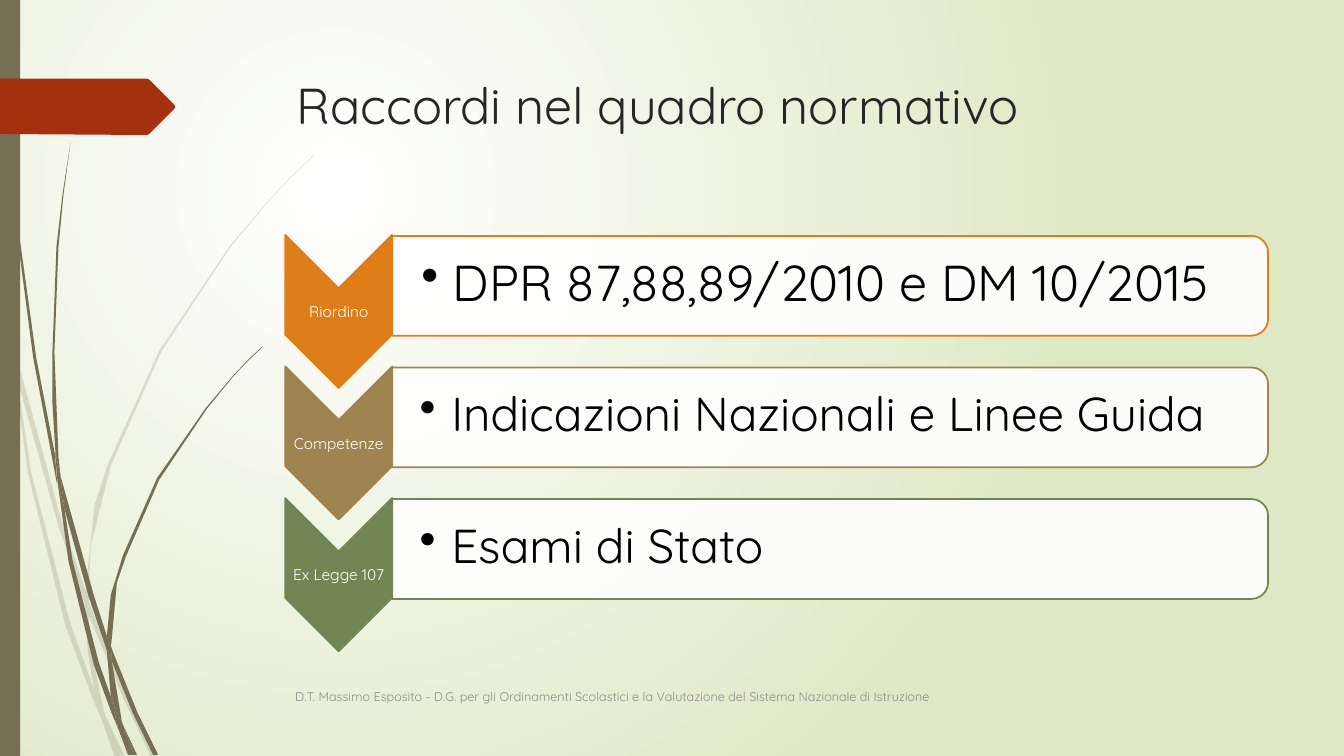
from dataclasses import dataclass

from lxml.etree import SubElement
from pptx import Presentation
from pptx.dml.color import RGBColor
from pptx.enum.shapes import MSO_SHAPE as Preset
from pptx.enum.text import MSO_ANCHOR as Anchor, MSO_AUTO_SIZE as AutoSize, PP_ALIGN as Align
from pptx.oxml.ns import qn
from pptx.util import Pt


@dataclass(frozen=True)
class Theme:
    font: str = "Quicksand"
    olive: str = "766F54"
    tag: str = "A53010"
    white: str = "FFFFFF"
    meadow: str = "DFE8C4"
    heading: str = "262626"
    body: str = "000000"
    muted: str = "8C8C8C"
    orange: str = "DE7E18"
    tan: str = "9F8351"
    green: str = "728653"
    title_size: float = 36
    label_size: float = 11
    footer_size: float = 9
    outline: float = 1.25


# Outlines are in hundredths of an inch, which is 0.72 points
OUTLINE_UNIT = Pt(0.72)

PALE_GRASS = [
    [(11, 350), (9, 322), (0, 282), (0, 299), (10, 344)],
    [(58, 522), (84, 599), (85, 586), (62, 520), (14, 345), (17, 376)],
    [(92, 607), (88, 596), (88, 610), (123, 694), (150, 751), (155, 751), (127, 692)],
    [(119, 751), (124, 751), (105, 711)],
    [(93, 683), (70, 619), (31, 469), (17, 376), (11, 350), (28, 470), (65, 621),
     (92, 693), (101, 714), (99, 707)],
    [(84, 599), (87, 646), (93, 683), (96, 692), (105, 711), (103, 706), (91, 646),
     (88, 610), (88, 608)],
    [(88, 584), (90, 542), (110, 462), (160, 349), (229, 245), (268, 198), (290, 175),
     (312, 154), (312, 153), (289, 175), (268, 197), (228, 244), (158, 348), (107, 461),
     (94, 501), (85, 584), (85, 586), (88, 596)],
    [(101, 714), (114, 751), (119, 751)],
    [(88, 608), (88, 610), (88, 596), (85, 586), (84, 599)],
    [(96, 692), (93, 683), (99, 707), (101, 714), (119, 751), (105, 711)],
]
DARK_GRASS = [
    [(7, 110), (17, 233), (33, 355), (56, 477), (57, 481), (55, 457), (55, 453),
     (36, 355), (19, 232), (8, 109), (5, 48), (4, 0), (3, 0), (4, 48)],
    [(88, 592), (106, 645), (106, 631), (93, 590), (60, 472), (64, 505)],
    [(113, 649), (110, 641), (111, 656), (132, 708), (152, 749), (157, 749), (136, 706)],
    [(110, 691), (98, 657), (72, 556), (64, 505), (57, 477), (68, 557), (93, 659),
     (111, 708), (117, 722), (116, 717)],
    [(60, 472), (58, 453), (54, 349), (58, 245), (63, 193), (70, 141), (62, 193),
     (56, 245), (52, 349), (52, 400), (55, 449)],
    [(133, 749), (136, 749), (122, 719)],
    [(57, 477), (64, 505), (60, 472), (55, 449), (55, 453)],
    [(111, 633), (116, 578), (125, 552), (158, 476), (205, 406), (231, 374), (245, 359),
     (261, 344), (260, 344), (245, 358), (231, 373), (204, 405), (156, 474), (122, 551),
     (110, 590), (106, 631), (110, 641)],
    [(117, 722), (127, 749), (131, 749)],
    [(106, 645), (110, 691), (116, 706), (122, 719), (121, 716), (111, 656), (109, 651)],
    [(106, 645), (109, 651), (111, 656), (110, 641), (106, 631)],
    [(116, 706), (110, 691), (116, 717), (117, 722), (130, 749), (133, 749), (122, 719)],
]
TAG_OUTLINE = [(0, 78), (146, 78), (148, 79), (173, 104), (174, 106), (173, 108),
               (148, 133), (146, 134), (0, 133)]


class SlideBuilder:
    def __init__(self, slide, theme):
        self.slide = slide
        self.theme = theme

    def background(self, inner, outer):
        fill = self.slide.background.fill
        fill.gradient()
        for stop, color in zip(fill.gradient_stops, (inner, outer)):
            stop.color.rgb = RGBColor.from_string(color)
        gradient = self.slide.element.find(".//" + qn("a:gradFill"))
        gradient.remove(gradient.find(qn("a:lin")))
        circle = SubElement(gradient, qn("a:path"), {"path": "circle"})
        SubElement(circle, qn("a:fillToRect"), l="50000", t="50000", r="100000", b="100000")

    def paint(self, shape, fill, opacity=100, line=None):
        shape.shadow.inherit = False
        shape.fill.solid()
        shape.fill.fore_color.rgb = RGBColor.from_string(fill)
        if opacity < 100:
            color = shape.element.spPr.find(qn("a:solidFill"))[0]
            SubElement(color, qn("a:alpha"), val=str(opacity * 1000))
        if line:
            shape.line.color.rgb = RGBColor.from_string(line)
            shape.line.width = Pt(self.theme.outline)
        else:
            shape.line.fill.background()

    def outline(self, points, fill, opacity=100):
        builder = self.slide.shapes.build_freeform(*points[0], scale=OUTLINE_UNIT)
        builder.add_line_segments(points[1:], close=True)
        self.paint(builder.convert_to_shape(), fill, opacity)

    def preset(self, kind, box, fill, opacity=100, line=None, rotation=0):
        shape = self.slide.shapes.add_shape(kind, *map(Pt, box))
        shape.rotation = rotation
        self.paint(shape, fill, opacity, line)

    def set_text(self, frame, text, size, color, align=Align.LEFT):
        frame.word_wrap = True
        frame.auto_size = AutoSize.NONE
        frame.text = text
        paragraph = frame.paragraphs[0]
        paragraph.alignment = align
        font = paragraph.runs[0].font
        font.name = self.theme.font
        font.size = Pt(size)
        font.color.rgb = RGBColor.from_string(color)
        return paragraph

    def title(self, text, box):
        heading = self.slide.shapes.title
        heading.left, heading.top, heading.width, heading.height = map(Pt, box)
        heading.text_frame.vertical_anchor = Anchor.TOP
        self.set_text(heading.text_frame, text, self.theme.title_size, self.theme.heading)

    def text(self, text, box, size, color, align=Align.LEFT, insets=(7.2, 3.6, 7.2, 3.6)):
        frame = self.slide.shapes.add_textbox(*map(Pt, box)).text_frame
        frame.vertical_anchor = Anchor.MIDDLE
        (frame.margin_left, frame.margin_top,
         frame.margin_right, frame.margin_bottom) = map(Pt, insets)
        return self.set_text(frame, text, size, color, align)

    def bullet(self, paragraph, indent):
        paragraph.level = 1
        properties = paragraph._p.get_or_add_pPr()
        properties.set("marL", str(Pt(indent)))
        properties.set("indent", str(-Pt(indent)))
        SubElement(properties, qn("a:buChar"), char="•")

    def step(self, offset, label, content, size, color):
        theme = self.theme
        # Chevron and its label
        self.preset(Preset.CHEVRON, (187.2, 184.3 + offset, 109.4, 76.3), color,
                    line=color, rotation=90)
        name = self.text(label, (203.8, 206.6 + offset, 76.3, 33.1), theme.label_size,
                         theme.white, Align.CENTER, (0.7,) * 4)
        name.line_spacing = 0.9
        # Panel and its bullet
        self.preset(Preset.ROUND_2_SAME_RECTANGLE, (557.3, -108.7 + offset, 71.3, 625.7),
                    theme.white, 90, color, 90)
        edge = size * 0.06
        rule = self.text(content, (280.8, 171.4 + offset, 622.1, 64.1), size, theme.body,
                         insets=(size * 0.56, edge, edge, edge))
        rule.line_spacing = 0.9
        self.bullet(rule, 22.5)


def main():
    theme = Theme()
    deck = Presentation()
    deck.slide_width, deck.slide_height = Pt(960), Pt(540)
    page = SlideBuilder(deck.slides.add_slide(deck.slide_layouts[5]), theme)

    # Backdrop
    page.background(theme.white, theme.meadow)
    for blades, opacity in ((PALE_GRASS, 20), (DARK_GRASS, 100)):
        for blade in blades:
            page.outline(blade, theme.olive, opacity)
    page.preset(Preset.RECTANGLE, (0, 0, 14.4, 540), theme.olive)
    page.outline(TAG_OUTLINE, theme.tag)

    # Title
    page.title("Raccordi nel quadro normativo", (204.5, 49, 702, 54))

    # Steps
    steps = [
        ("Riordino", "DPR 87,88,89/2010 e DM 10/2015", 36, theme.orange),
        ("Competenze", "Indicazioni Nazionali e Linee Guida", 34, theme.tan),
        ("Ex Legge 107", "Esami di Stato", 34, theme.green),
    ]
    row_pitch = 94
    for row, step in enumerate(steps):
        page.step(row * row_pitch, *step)

    # Footer
    page.text("D.T. Massimo Esposito - D.G. per gli Ordinamenti Scolastici e la "
              "Valutazione del Sistema Nazionale di Istruzione",
              (203.8, 483.1, 599.8, 28.8), theme.footer_size, theme.muted)

    deck.save("out.pptx")


if __name__ == "__main__":
    main()
